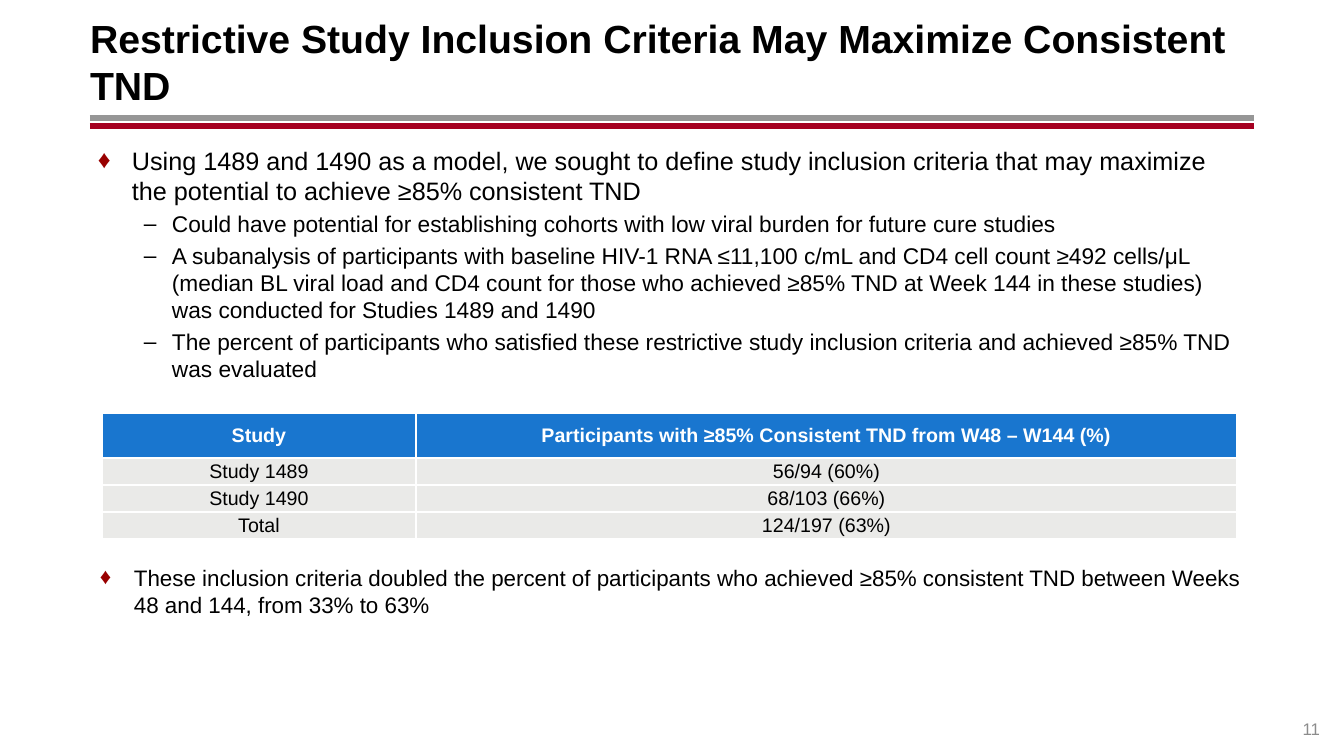
from lxml.etree import SubElement
from pptx import Presentation
from pptx.dml.color import RGBColor
from pptx.enum.shapes import MSO_CONNECTOR
from pptx.enum.text import MSO_ANCHOR, PP_ALIGN
from pptx.oxml.ns import qn
from pptx.util import Pt

PX = 914400 / 100.8
LEFT, RIGHT = 90, 1254
WIDTH = RIGHT - LEFT


def px(length):
    return round(length * PX)


def add_run(paragraph, text, size, color="000000", bold=False):
    run = paragraph.add_run()
    run.text = text
    run.font.name = "Arial"
    run.font.size = Pt(size)
    run.font.bold = bold
    run.font.color.rgb = RGBColor.from_string(color)


prs = Presentation()
prs.slide_width, prs.slide_height = px(1344), px(756)
slide = prs.slides.add_slide(prs.slide_layouts[6])

# Double rule under the title
for y, color in [(118, "969696"), (126, "A50021")]:
    rule = slide.shapes.add_connector(
        MSO_CONNECTOR.STRAIGHT, px(LEFT), px(y), px(RIGHT), px(y))
    rule.line.color.rgb = RGBColor.from_string(color)
    rule.line.width = Pt(4.25)
    SubElement(rule._element.spPr, qn("a:effectLst"))

# Title and page number
title = slide.shapes.add_textbox(px(LEFT), px(18), px(WIDTH), px(87)).text_frame
title.word_wrap = True
title.vertical_anchor = MSO_ANCHOR.MIDDLE
title.margin_left = 0
add_run(title.paragraphs[0],
        "Restrictive Study Inclusion Criteria May Maximize Consistent TND", 28, bold=True)

page = slide.shapes.add_textbox(px(RIGHT), px(699), px(66), px(40)).text_frame
page.word_wrap = True
page.vertical_anchor = MSO_ANCHOR.BOTTOM
page.margin_left = page.margin_right = page.margin_top = page.margin_bottom = 0
page.paragraphs[0].alignment = PP_ALIGN.RIGHT
add_run(page.paragraphs[0], "11", 12, "8C8C8C")

# Bullet blocks: left, top, height, then (level, size, text) for each point
bullet_blocks = [
    (88, 140, 253, [
        (0, 18, "Using 1489 and 1490 as a model, we sought to define study inclusion criteria "
                "that may maximize the potential to achieve ≥85% consistent TND"),
        (1, 16.2, "Could have potential for establishing cohorts with low viral burden "
                  "for future cure studies"),
        (1, 16.2, "A subanalysis of participants with baseline HIV-1 RNA ≤11,100 c/mL and CD4 "
                  "cell count ≥492 cells/μL (median BL viral load and CD4 count for those who "
                  "achieved ≥85% TND at Week 144 in these studies) was conducted for Studies "
                  "1489 and 1490"),
        (1, 16.2, "The percent of participants who satisfied these restrictive study inclusion "
                  "criteria and achieved ≥85% TND was evaluated"),
    ]),
    (90, 559, 65, [
        (0, 16, "These inclusion criteria doubled the percent of participants who achieved ≥85% "
                "consistent TND between Weeks 48 and 144, from 33% to 63%"),
    ]),
]
bullet_styles = [("♦", "990000", 34, 34), ("–", "000000", 74, 28)]

for left, top, height, points in bullet_blocks:
    body = slide.shapes.add_textbox(px(left), px(top), px(WIDTH), px(height)).text_frame
    body.word_wrap = True
    for i, (level, size, text) in enumerate(points):
        point = body.add_paragraph() if i else body.paragraphs[0]
        point.level = level
        point.space_before = Pt(size * 0.2)
        mark, mark_color, indent, hanging = bullet_styles[level]
        props = point._p.get_or_add_pPr()
        props.set("marL", str(px(indent)))
        props.set("indent", str(-px(hanging)))
        SubElement(SubElement(props, qn("a:buClr")), qn("a:srgbClr"), val=mark_color)
        SubElement(props, qn("a:buFont"), typeface="Arial")
        SubElement(props, qn("a:buChar"), char=mark)
        add_run(point, text, size)

# Results table
results = [
    ("Study", "Participants with ≥85% Consistent TND from W48 – W144 (%)"),
    ("Study 1489", "56/94 (60%)"),
    ("Study 1490", "68/103 (66%)"),
    ("Total", "124/197 (63%)"),
]
column_widths = [314, 821]
row_heights = [45, 27, 27, 27]
table = slide.shapes.add_table(
    len(results), len(column_widths), px(102), px(413),
    px(sum(column_widths)), px(sum(row_heights))).table
for column, width in zip(table.columns, column_widths):
    column.width = px(width)
for r, (row, height) in enumerate(zip(results, row_heights)):
    table.rows[r].height = px(height)
    header = r == 0
    for c, text in enumerate(row):
        cell = table.cell(r, c)
        cell.vertical_anchor = MSO_ANCHOR.MIDDLE
        cell.margin_left = cell.margin_right = cell.margin_top = px(1)
        cell.margin_bottom = 0
        for side in ("lnL", "lnR", "lnT", "lnB"):
            border = SubElement(cell._tc.get_or_add_tcPr(), qn(f"a:{side}"), w=str(Pt(1)))
            SubElement(SubElement(border, qn("a:solidFill")), qn("a:srgbClr"), val="FFFFFF")
        cell.fill.solid()
        cell.fill.fore_color.rgb = RGBColor.from_string("1976CF" if header else "EAEAE8")
        paragraph = cell.text_frame.paragraphs[0]
        paragraph.alignment = PP_ALIGN.CENTER
        add_run(paragraph, text, 14, "FFFFFF" if header else "000000", bold=header)

prs.save("out.pptx")
